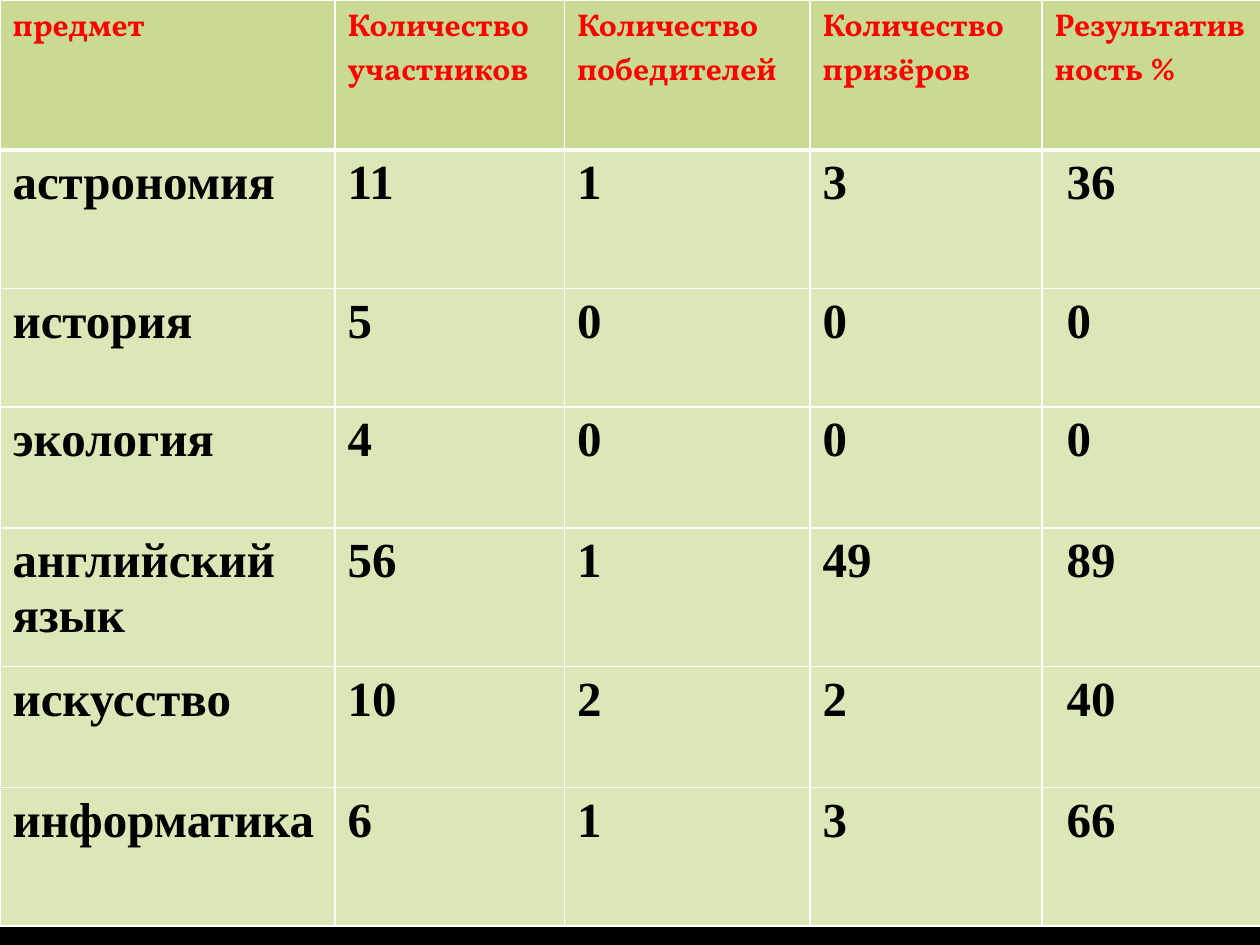
from dataclasses import dataclass

from lxml.etree import SubElement
from pptx import Presentation
from pptx.dml.color import RGBColor
from pptx.oxml.ns import qn
from pptx.table import _Cell
from pptx.util import Inches, Pt

BLACK = RGBColor(0x00, 0x00, 0x00)
WHITE = RGBColor(0xFF, 0xFF, 0xFF)
RED = RGBColor(0xFF, 0x00, 0x00)
HEADER_GREEN = RGBColor(0xC9, 0xDA, 0x92)
BODY_GREEN = RGBColor(0xDB, 0xE7, 0xB6)

COLUMN_WIDTHS = (2.66, 1.82, 1.95, 1.84, 1.74)
ROW_HEIGHTS = (1.19, 1.1, 0.94, 0.96, 1.1, 0.96, 1.1)
HEADINGS = (
    "предмет",
    "Количество участников",
    "Количество победителей",
    "Количество\nпризёров",
    "Результативность %",
)


@dataclass(frozen=True)
class SubjectResult:
    subject: str
    participants: int
    winners: int
    runners_up: int
    success_percent: int

    def texts(self) -> tuple[str, ...]:
        counts = (self.participants, self.winners, self.runners_up)
        return (self.subject, *map(str, counts), f" {self.success_percent}")


@dataclass(frozen=True)
class CellStyle:
    font: str
    size: int
    color: RGBColor
    fill: RGBColor


RESULTS = (
    SubjectResult("астрономия", 11, 1, 3, 36),
    SubjectResult("история", 5, 0, 0, 0),
    SubjectResult("экология", 4, 0, 0, 0),
    SubjectResult("английский язык", 56, 1, 49, 89),
    SubjectResult("искусство", 10, 2, 2, 40),
    SubjectResult("информатика", 6, 1, 3, 66),
)
HEADER_STYLE = CellStyle("Vollkorn", 18, RED, HEADER_GREEN)
BODY_STYLE = CellStyle("Times New Roman", 28, BLACK, BODY_GREEN)


def set_borders(cell: _Cell, top: int, bottom: int) -> None:
    """Draw white borders; the sides are always 1 point wide."""
    properties = cell._tc.get_or_add_tcPr()
    for tag, width in (("lnL", 1), ("lnR", 1), ("lnT", top), ("lnB", bottom)):
        line = SubElement(properties, qn(f"a:{tag}"), w=str(Pt(width)))
        fill = SubElement(line, qn("a:solidFill"))
        SubElement(fill, qn("a:srgbClr"), val=str(WHITE))


def write_cell(cell: _Cell, text: str, style: CellStyle) -> None:
    cell.fill.solid()
    cell.fill.fore_color.rgb = style.fill
    frame = cell.text_frame
    for index, line in enumerate(text.split("\n")):
        para = frame.add_paragraph() if index else frame.paragraphs[0]
        span = para.add_run()
        span.text = line
        span.font.name = style.font
        span.font.size = Pt(style.size)
        span.font.bold = True
        span.font.color.rgb = style.color


def main() -> None:
    deck = Presentation()
    deck.slide_width, deck.slide_height = Inches(10), Inches(7.5)
    page = deck.slides.add_slide(deck.slide_layouts[6])
    page.background.fill.solid()
    page.background.fill.fore_color.rgb = BLACK

    table = page.shapes.add_table(
        len(ROW_HEIGHTS), len(COLUMN_WIDTHS), 0, 0, Inches(10), Inches(7.34)
    ).table
    for column, width in zip(table.columns, COLUMN_WIDTHS):
        column.width = Inches(width)
    for row, height in zip(table.rows, ROW_HEIGHTS):
        row.height = Inches(height)

    rows = (HEADINGS, *(result.texts() for result in RESULTS))
    for row_index, texts in enumerate(rows):
        style = BODY_STYLE if row_index else HEADER_STYLE
        top = 3 if row_index == 1 else 1
        bottom = 3 if row_index == 0 else 1
        for column_index, text in enumerate(texts):
            cell = table.cell(row_index, column_index)
            set_borders(cell, top, bottom)
            write_cell(cell, text, style)

    deck.save("out.pptx")


if __name__ == "__main__":
    main()
